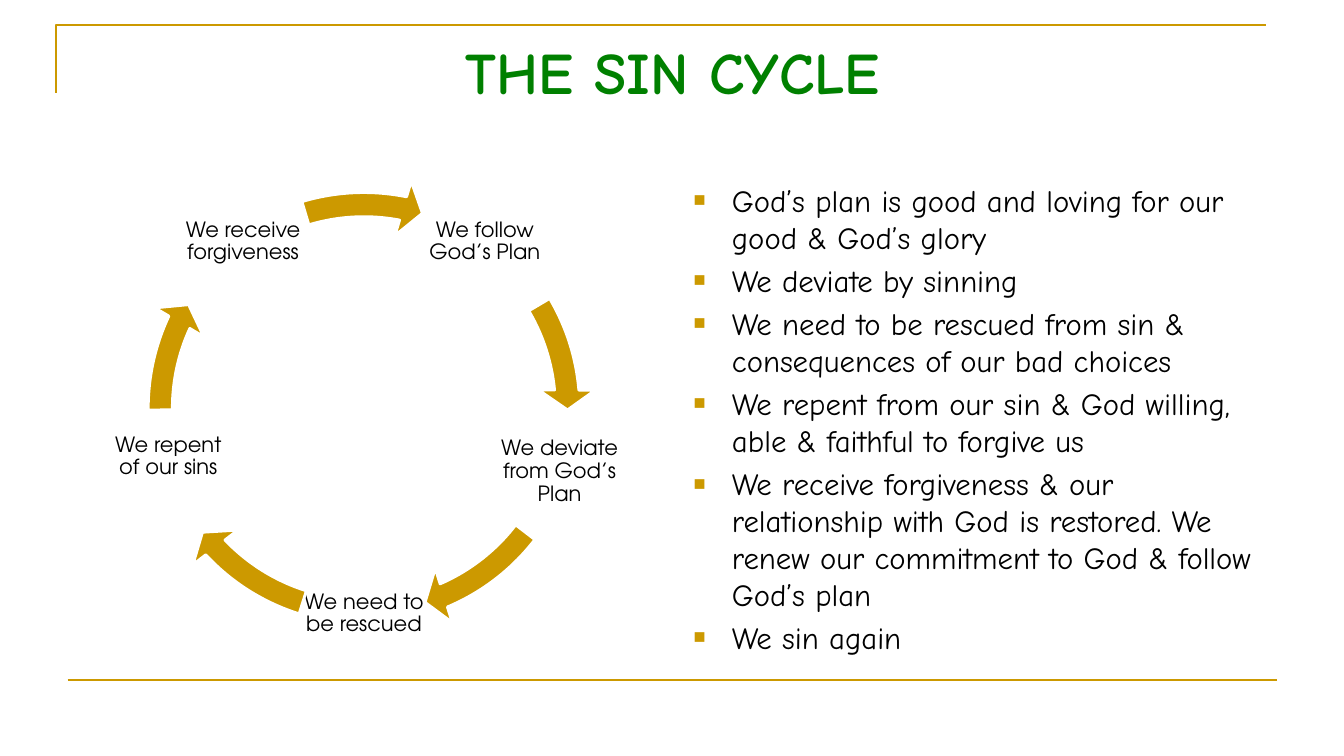
import math
from dataclasses import dataclass

import pptx
import pptx.dml.color
import pptx.enum.shapes
import pptx.enum.text
import pptx.oxml
import pptx.oxml.ns
import pptx.util
from pptx.util import Inches


@dataclass(frozen=True)
class Theme:
    gold: str = "CC9900"
    green: str = "008000"
    black: str = "000000"
    white: str = "FFFFFF"
    text_font: str = "Comic Neue"
    cycle_font: str = "TeX Gyre Adventor"
    title_size: int = 42
    body_size: int = 22
    cycle_size: int = 15


THEME = Theme()
PP_ALIGN = pptx.enum.text.PP_ALIGN
ANCHOR = pptx.enum.text.MSO_ANCHOR

POINTS = [
    "God’s plan is good and loving for our good & God’s glory",
    "We deviate by sinning",
    "We need to be rescued from sin & consequences of our bad choices",
    "We repent from our sin & God willing, able & faithful to forgive us",
    "We receive forgiveness & our relationship with God is restored. "
    "We renew our commitment to God & follow God’s plan",
    "We sin again",
]

# Stage text, upward shift, and start and end angle of the arrow after it
STAGES = [
    ("We follow God’s Plan", 0, 329.44, 354.89),
    ("We deviate from God’s Plan", 0, 37.56, 66.91),
    ("We need to be rescued", 0, 107.49, 136.85),
    ("We repent of our sins", 0.15, 179.51, 204.97),
    ("We receive forgiveness", 0, 253.31, 281.1),
]
CENTER_X, CENTER_Y = 3.61, 4.05
STAGE_RADIUS, STAGE_SIZE, ARROW_SIZE = 2.04, 1.23, 4.6


def rgb(color):
    return pptx.dml.color.RGBColor.from_string(color)


def place(sp, left, top, width, height):
    sp.left, sp.top = Inches(left), Inches(top)
    sp.width, sp.height = Inches(width), Inches(height)


def add_run(p, text, font, size, color, bold=False):
    r = p.add_run()
    r.text = text
    r.font.name = font
    r.font.size = pptx.util.Pt(size)
    r.font.bold = bold
    r.font.color.rgb = rgb(color)


def set_bullet(p):
    pPr = p._p.get_or_add_pPr()
    pPr.set("marL", str(Inches(0.38)))
    pPr.set("indent", str(Inches(-0.38)))
    ns = pptx.oxml.ns.nsdecls("a")
    for xml in (
        f'<a:buClr {ns}><a:srgbClr val="{THEME.gold}"/></a:buClr>',
        f'<a:buSzPct {ns} val="65000"/>',
        f'<a:buFont {ns} typeface="Arial"/>',
        f'<a:buChar {ns} char="■"/>',
    ):
        pPr.append(pptx.oxml.parse_xml(xml))


def add_frame(slide):
    # Corner bracket
    builder = slide.shapes.build_freeform(Inches(0.56), Inches(0.92))
    builder.add_line_segments(
        [(Inches(0.56), Inches(0.25)), (Inches(12.56), Inches(0.25))], close=False)
    bracket = builder.convert_to_shape()
    bracket.shadow.inherit = False
    bracket.fill.background()

    # Bottom rule
    rule = slide.shapes.add_connector(
        pptx.enum.shapes.MSO_CONNECTOR.STRAIGHT,
        Inches(0.67), Inches(6.75), Inches(12.67), Inches(6.75))
    rule._element.spPr.append(
        pptx.oxml.parse_xml(f'<a:effectLst {pptx.oxml.ns.nsdecls("a")}/>'))

    for sp in (bracket, rule):
        sp.line.color.rgb = rgb(THEME.gold)
        sp.line.width = pptx.util.Pt(1.5)


def fill_title(sp, text):
    place(sp, 0.67, 0.3, 12, 0.8)
    tf = sp.text_frame
    tf.auto_size = pptx.enum.text.MSO_AUTO_SIZE.NONE
    tf.vertical_anchor = ANCHOR.MIDDLE
    p = tf.paragraphs[0]
    p.alignment = PP_ALIGN.CENTER
    add_run(p, text, THEME.text_font, THEME.title_size, THEME.green, bold=True)


def fill_list(sp, points):
    place(sp, 6.78, 1.75, 5.89, 4.95)
    tf = sp.text_frame
    tf.auto_size = pptx.enum.text.MSO_AUTO_SIZE.NONE
    for i, text in enumerate(points):
        p = tf.add_paragraph() if i else tf.paragraphs[0]
        p.space_before = pptx.util.Pt(0.2 * THEME.body_size)
        set_bullet(p)
        add_run(p, text, THEME.text_font, THEME.body_size, THEME.black)


def add_stage(slide, text, angle, shift):
    x = CENTER_X + STAGE_RADIUS * math.cos(angle)
    y = CENTER_Y + STAGE_RADIUS * math.sin(angle) - shift
    half = STAGE_SIZE / 2
    sp = slide.shapes.add_textbox(
        Inches(x - half), Inches(y - half), Inches(STAGE_SIZE), Inches(STAGE_SIZE))
    tf = sp.text_frame
    tf.word_wrap = True
    tf.vertical_anchor = ANCHOR.MIDDLE
    tf.margin_left = tf.margin_right = Inches(0.02)
    tf.margin_top = tf.margin_bottom = Inches(0.02)
    p = tf.paragraphs[0]
    p.alignment = PP_ALIGN.CENTER
    p.line_spacing = 0.9
    p.space_after = pptx.util.Pt(0.35 * THEME.cycle_size)
    add_run(p, text, THEME.cycle_font, THEME.cycle_size, THEME.black)


def add_arrow(slide, start, end):
    sp = slide.shapes.add_shape(
        pptx.enum.shapes.MSO_SHAPE.CIRCULAR_ARROW,
        Inches(CENTER_X - ARROW_SIZE / 2), Inches(CENTER_Y - ARROW_SIZE / 2),
        Inches(ARROW_SIZE), Inches(ARROW_SIZE))
    # Angles are stored in 60000ths of a degree, adjustments in 100000ths
    for i, value in enumerate((0.052, 5.6 * 0.6, end * 0.6, start * 0.6, 0.061)):
        sp.adjustments[i] = value
    sp.shadow.inherit = False
    sp.fill.solid()
    sp.fill.fore_color.rgb = rgb(THEME.gold)
    sp.line.color.rgb = rgb(THEME.white)
    sp.line.width = pptx.util.Pt(2)


def main():
    prs = pptx.Presentation()
    prs.slide_width, prs.slide_height = Inches(13.33), Inches(7.5)
    slide = prs.slides.add_slide(prs.slide_layouts[1])

    add_frame(slide)
    fill_title(slide.shapes.title, "THE SIN CYCLE")
    fill_list(slide.placeholders[1], POINTS)

    # Cycle: stages evenly spaced clockwise from the upper right
    step = 360 / len(STAGES)
    for i, (text, shift, start, end) in enumerate(STAGES):
        add_stage(slide, text, math.radians(-54 + i * step), shift)
        add_arrow(slide, start, end)

    prs.save("out.pptx")


if __name__ == "__main__":
    main()
